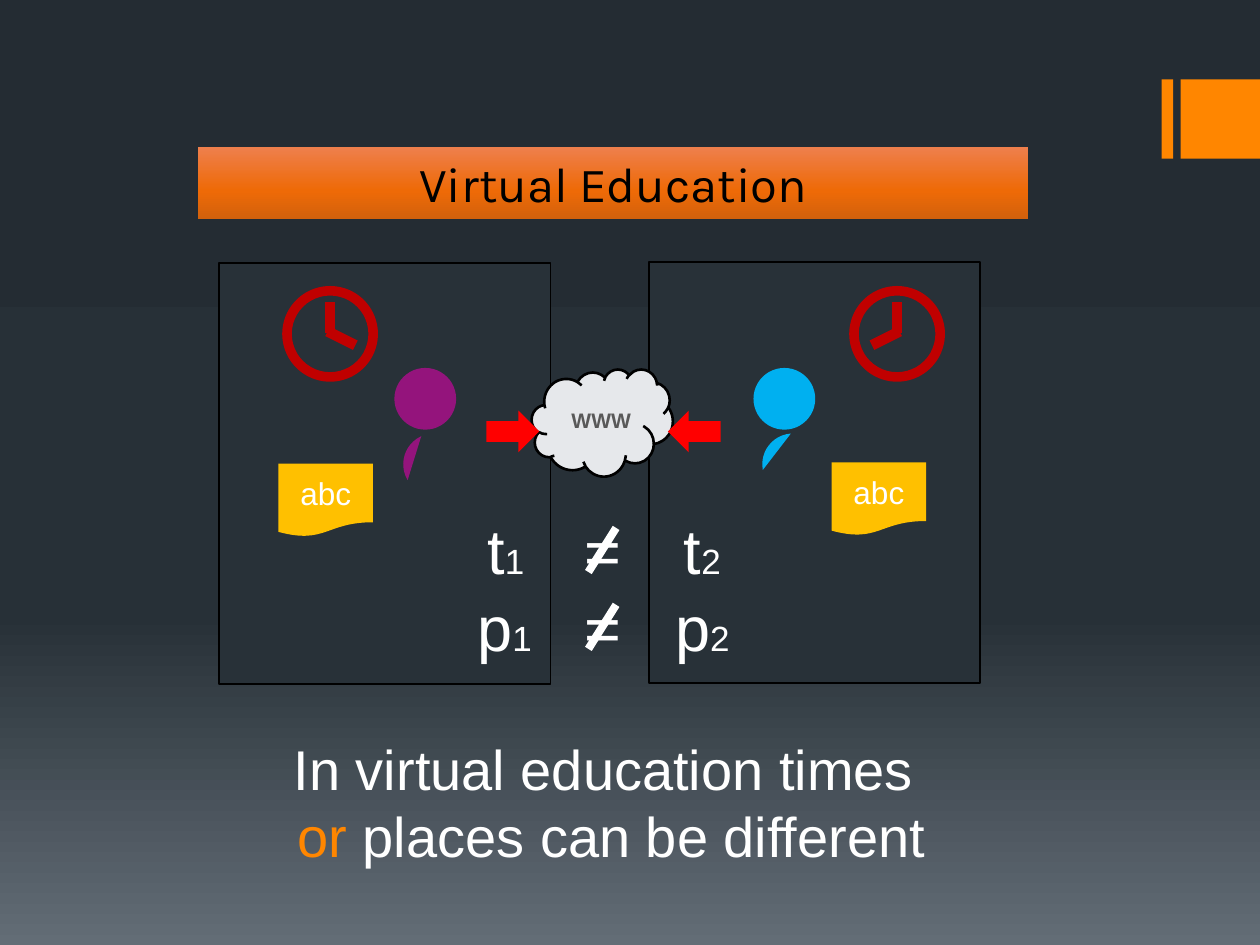
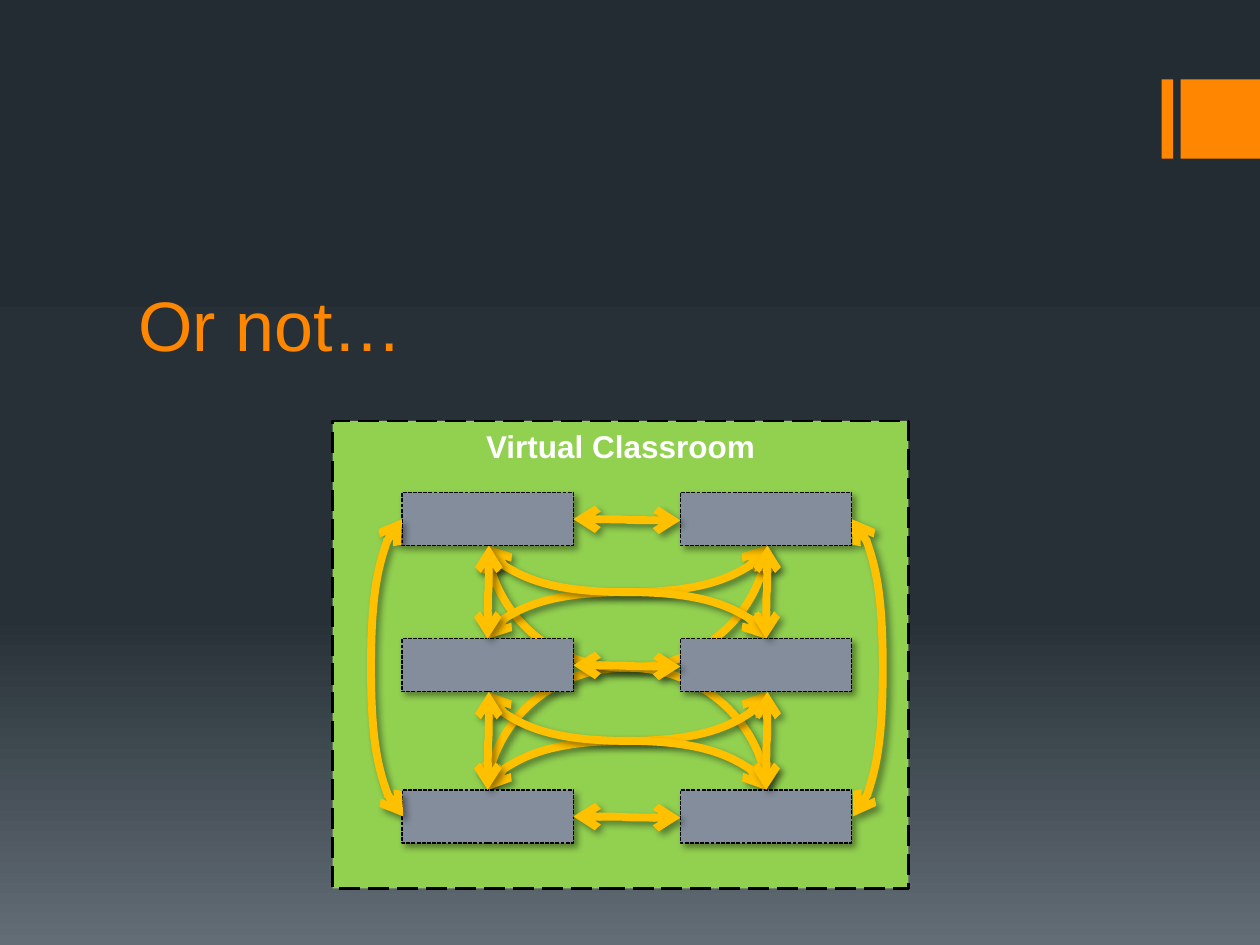
"""Build two slides that show when and where virtual education happens."""
import math
from dataclasses import dataclass

from lxml import etree
from pptx import Presentation
from pptx import util as u
from pptx.dml.color import RGBColor
from pptx.enum import dml, shapes, text
from pptx.oxml.ns import qn

MSO = shapes.MSO_SHAPE
ALIGN = text.PP_ALIGN
ANCHOR = text.MSO_ANCHOR
DASH = dml.MSO_LINE


@dataclass(frozen=True)
class Theme:
    font: str = "Arial"
    banner_font: str = "Karla"
    backdrop: tuple = ((0, "242C33"), (65, "273037"), (100, "636D76"))
    banner: tuple = ((0, "EE7F4C"), (60, "EE6A07"), (100, "D2610C"))
    accent: str = "FF8600"
    white: str = "FFFFFF"
    black: str = "000000"
    room: str = "283138"
    clock: str = "C00000"
    purple: str = "94147C"
    blue: str = "00B0F0"
    amber: str = "FFC000"
    red: str = "FF0000"
    cloud: str = "E6E8EB"
    cloud_text: str = "595959"
    green: str = "92D050"
    desk: str = "838D9B"
    title: int = 40
    symbol: int = 36
    statement: int = 32
    heading: int = 28
    index: int = 20
    label: int = 18
    small: int = 12


def write(p, words, size=18, color="FFFFFF", font="Arial", bold=False):
    r = p.add_run()
    r.text = words
    r.font.size = u.Pt(size)
    r.font.name = font
    r.font.bold = bold
    r.font.color.rgb = RGBColor.from_string(color)


def paint(fill, color):
    if isinstance(color, str):
        fill.solid()
        fill.fore_color.rgb = RGBColor.from_string(color)
        return
    fill.gradient()
    fill.gradient_angle = 270
    stops = fill._fill._gradFill.find(qn("a:gsLst"))
    stops.clear()
    for percent, shade in color:
        gs = etree.SubElement(stops, qn("a:gs"), pos=str(percent * 1000))
        etree.SubElement(gs, qn("a:srgbClr"), val=shade)


def draw_line(line, color, width, dash=None):
    line.color.rgb = RGBColor.from_string(color)
    line.width = u.Pt(width)
    if dash:
        line.dash_style = dash


def cast_shadow(effects, color):
    shadow = etree.SubElement(effects, qn("a:outerShdw"), blurRad=str(u.Pt(4)),
                              dist=str(u.Pt(3)), dir="2700000", rotWithShape="0")
    shade = etree.SubElement(shadow, qn("a:srgbClr"), val=color)
    etree.SubElement(shade, qn("a:alpha"), val="40000")


class Deck:
    def __init__(self, theme):
        self.t = theme
        self.prs = Presentation()
        self.prs.slide_width, self.prs.slide_height = u.Inches(10), u.Inches(7.5)
        self.s = None

    def slide(self):
        self.s = self.prs.slides.add_slide(self.prs.slide_layouts[6])
        paint(self.s.background.fill, self.t.backdrop)
        for x, w in ((9.22, 0.09), (9.37, 0.63)):
            self.shape(MSO.RECTANGLE, x, 0.63, w, 0.63, self.t.accent)

    def shape(self, kind, x, y, w, h, color, line=None, rotation=0, adjust=(), shadow=False):
        sp = self.s.shapes.add_shape(kind, *map(u.Inches, (x, y, w, h)))
        sp.rotation = rotation
        for i, value in enumerate(adjust):
            sp.adjustments[i] = value
        paint(sp.fill, color)
        if line:
            draw_line(sp.line, *line)
        else:
            sp.line.fill.background()
        sp.shadow.inherit = False
        if shadow:
            cast_shadow(sp._element.spPr.find(qn("a:effectLst")), self.t.black)
        return sp

    def label(self, sp, words, align=ALIGN.CENTER, anchor=ANCHOR.MIDDLE, **form):
        tf = sp.text_frame
        tf.word_wrap = True
        tf.vertical_anchor = anchor
        tf.paragraphs[0].alignment = align
        write(tf.paragraphs[0], words, **form)

    def text(self, x, y, w, h, paragraphs, align=ALIGN.LEFT, anchor=ANCHOR.TOP, wrap=True):
        tf = self.s.shapes.add_textbox(*map(u.Inches, (x, y, w, h))).text_frame
        tf.word_wrap = wrap
        if not wrap:
            tf.auto_size = text.MSO_AUTO_SIZE.SHAPE_TO_FIT_TEXT
        tf.vertical_anchor = anchor
        for i, runs in enumerate(paragraphs):
            p = tf.add_paragraph() if i else tf.paragraphs[0]
            p.alignment = align
            for words, form in runs:
                write(p, words, **form)

    def connector(self, kind, start, end, color, width):
        c = self.s.shapes.add_connector(kind, *map(u.Inches, (*start, *end)))
        draw_line(c.line, color, width)
        return c, etree.SubElement(c._element.spPr, qn("a:effectLst"))

    def line(self, start, end, color, width):
        self.connector(shapes.MSO_CONNECTOR.STRAIGHT, start, end, color, width)

    def curve(self, start, end, turn=0, bend=None):
        (x1, y1), (x2, y2) = start, end
        cx, cy = (x1 + x2) / 2, (y1 + y2) / 2
        cos, sin = math.cos(math.radians(turn)), math.sin(math.radians(turn))
        dx = ((x2 - x1) * cos + (y2 - y1) * sin) / 2
        dy = ((y2 - y1) * cos - (x2 - x1) * sin) / 2
        c, effects = self.connector(shapes.MSO_CONNECTOR.CURVE, (cx - dx, cy - dy),
                                    (cx + dx, cy + dy), self.t.amber, 4.5)
        cast_shadow(effects, self.t.black)
        spPr = c._element.spPr
        if turn:
            spPr.find(qn("a:xfrm")).set("rot", str(turn * 60000))
        if bend is not None:
            guides = spPr.find(qn("a:prstGeom")).find(qn("a:avLst"))
            etree.SubElement(guides, qn("a:gd"), name="adj1", fmla=f"val {bend * 100000}")
        for tip in ("a:headEnd", "a:tailEnd"):
            etree.SubElement(spPr.find(qn("a:ln")), qn(tip), type="arrow")

    def curve_down(self, start, end):
        leaning_left = (end[0] - start[0]) * (end[1] - start[1]) < 0
        self.curve(start, end, 90 if leaning_left else 270)

    def clock(self, x, side):
        cx, color = x + 0.38, self.t.clock
        self.shape(MSO.DONUT, x, 2.27, 0.76, 0.76, color, adjust=[0.1])
        self.line((cx, 2.64), (cx, 2.4), color, 6)
        self.line((cx + side * 0.2, 2.74), (cx - side * 0.02, 2.63), color, 6)

    def person(self, x, color, rotation):
        self.shape(MSO.OVAL, x, 2.92, 0.49, 0.49, color)
        self.shape(MSO.CHORD, x + 0.07, 3.44, 0.49, 0.49, color, rotation=rotation,
                   adjust=[41.79 * 0.6, 138.21 * 0.6])

    def document(self, x, y):
        sp = self.shape(MSO.FLOWCHART_DOCUMENT, x, y, 0.75, 0.58, self.t.amber)
        self.label(sp, "abc", size=self.t.label)


def virtual_education(deck):
    t = deck.t
    deck.slide()
    for x, y in ((5.15, 2.08), (1.74, 2.09)):
        deck.shape(MSO.RECTANGLE, x, y, 2.63, 3.34, t.room, line=(t.black, 1))
    banner = deck.shape(MSO.RECTANGLE, 1.57, 1.17, 6.59, 0.57, t.banner)
    deck.label(banner, "Virtual Education", size=t.heading, color=t.black, font=t.banner_font)

    deck.person(5.98, t.blue, 127.6)
    deck.document(6.6, 3.67)
    deck.document(2.21, 3.68)
    deck.person(3.13, t.purple, 107.2)
    deck.clock(2.24, 1)
    deck.clock(6.74, -1)

    symbol, index = dict(size=t.symbol), dict(size=t.index)
    for letter, y, w, xs in (("t", 4.01, 0.5, (3.77, 5.33)), ("p", 4.62, 0.64, (3.69, 5.26))):
        for number, x in zip("12", xs):
            deck.text(x, y, w, 0.71, [[(letter, symbol), (number, index)]], wrap=False)
        deck.text(4.54, y, 0.5, 0.71, [[("=", symbol)]], wrap=False)
        deck.line((4.67, y + 0.53), (4.89, y + 0.18), t.white, 4.5)

    cloud = deck.shape(MSO.CLOUD, 4.22, 2.93, 1.12, 0.85, t.cloud, line=(t.black, 1.5))
    deck.label(cloud, "WWW", align=ALIGN.RIGHT, size=t.small, color=t.cloud_text, bold=True)
    for arrow, x in ((MSO.LEFT_ARROW, 5.3), (MSO.RIGHT_ARROW, 3.86)):
        deck.shape(arrow, x, 3.26, 0.42, 0.33, t.red)

    plain, strong = dict(size=t.statement), dict(size=t.statement, color=t.accent)
    deck.text(1.74, 5.78, 6.23, 1.18, [[("In virtual education times ", plain)],
              [("or ", strong), ("places can be different", plain)]], align=ALIGN.CENTER)


def virtual_classroom(deck):
    t = deck.t
    deck.slide()
    room = deck.shape(MSO.RECTANGLE, 2.64, 3.34, 4.57, 3.71, t.green,
                      line=(t.black, 1.5, DASH.LONG_DASH))
    deck.label(room, "Virtual Classroom", anchor=ANCHOR.TOP, size=t.label, bold=True)

    lefts, tops, w, h = (3.19, 5.4), (3.91, 5.07, 6.27), 1.36, 0.42
    left, right = (x + w / 2 for x in lefts)
    gaps = [(upper + h, lower) for upper, lower in zip(tops, tops[1:])]
    for top, bottom in [(tops[0] + h, tops[-1]), *reversed(gaps)]:
        deck.curve_down((left, bottom), (right, top))
        deck.curve_down((left, top), (right, bottom))

    deck.text(1, 1.69, 8, 1.26, [[("Or not…", dict(size=t.title, color=t.accent))]],
              anchor=ANCHOR.BOTTOM)

    for y in tops:
        for x in lefts:
            deck.shape(MSO.RECTANGLE, x, y, w, h, t.desk, shadow=True,
                       line=(t.black, 0.75, DASH.SQUARE_DOT))
    for x in (left, right):
        for top, bottom in gaps:
            deck.curve_down((x + 0.01, top), (x, bottom))
    for y in tops:
        deck.curve((lefts[0] + w, y + h / 2), (lefts[1], y + h / 2 + 0.01))

    first, last = tops[0] + h / 2, tops[-1] + h / 2
    outer = lefts[1] + w
    deck.curve((lefts[0], first), (lefts[0] + 0.01, last), turn=180, bend=-25)
    deck.curve((outer, first), (outer + 0.01, last), bend=25)


def main():
    deck = Deck(Theme())
    virtual_education(deck)
    virtual_classroom(deck)
    deck.prs.save("out.pptx")


if __name__ == "__main__":
    main()
